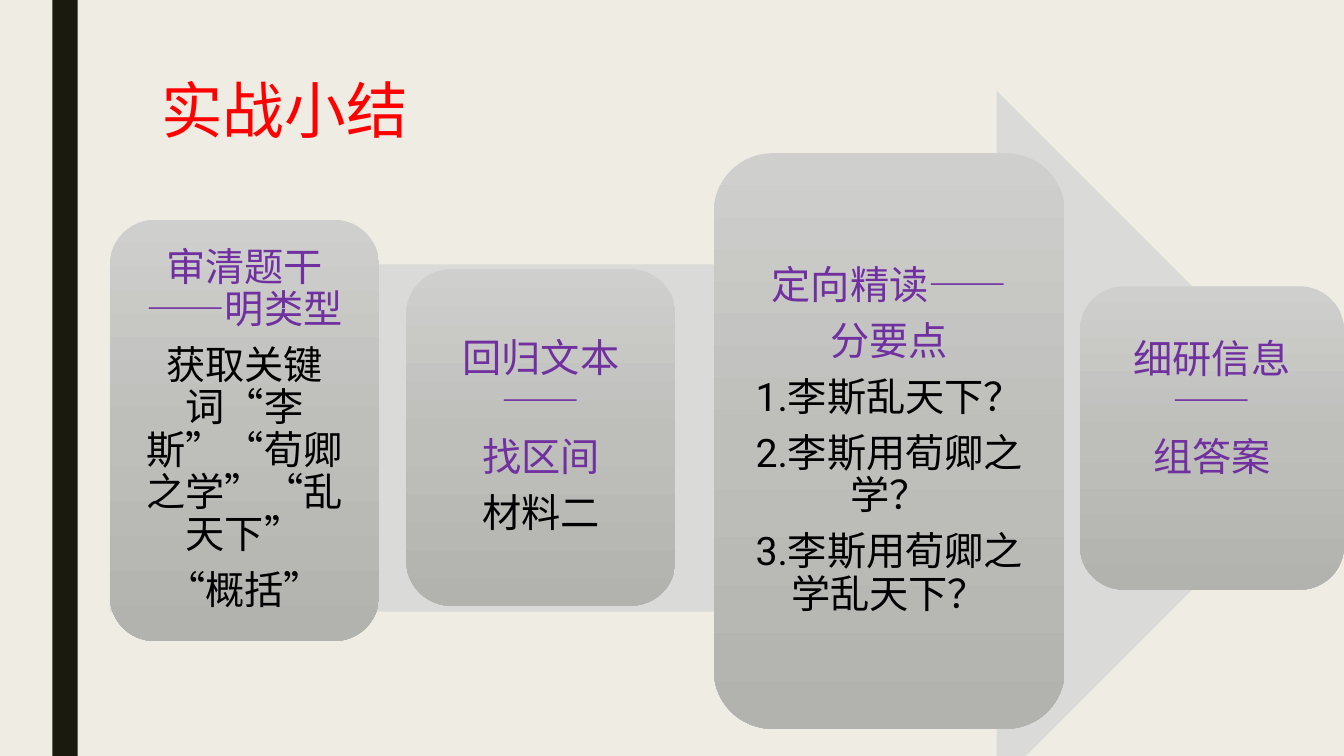
from copy import deepcopy
from dataclasses import dataclass

from pptx import Presentation
from pptx.dml.color import RGBColor
from pptx.enum import lang, shapes, text
from pptx.oxml import ns
from pptx.util import Inches, Pt


@dataclass(frozen=True)
class Theme:
    font: str = "Roboto"
    background: str = "EFEDE3"
    bar: str = "191B0E"
    arrow: str = "DADBD9"
    card: tuple = ("CFCFCD", "BEBEBB", "B2B3AF")
    title: str = "FF0000"
    heading: str = "7030A0"
    body: str = "000000"
    title_size: int = 44
    body_size: int = 28


THEME = Theme()
CARD_MARGIN = 0.12
EMPTY_LINE = 0.56

# Each step: box, heading lines, body lines, extra room below the text
STEPS = [
    ((1.09, 2.18, 2.67, 4.18), ["审清题干——明类型"],
     ["获取关键词“李斯”“荀卿之学”“乱天下”", "“概括”"], 0),
    ((4.03, 2.67, 2.67, 3.34), ["回归文本——", "找区间"], ["材料二"], 0),
    ((7.08, 1.52, 3.48, 5.71), ["定向精读——", "分要点"],
     ["1.李斯乱天下？", "2.李斯用荀卿之学？", "3.李斯用荀卿之学乱天下？"], 0),
    ((10.71, 2.84, 2.62, 3.01), ["细研信息——", "组答案"], [], EMPTY_LINE),
]


def write(para, words, *, size, color, align, spacing, after=0):
    para.alignment = align
    para.line_spacing = spacing
    para.space_before = Pt(0)
    para.space_after = Pt(after)
    span = para.add_run()
    span.text = words
    font = span.font
    font.name = THEME.font
    font.size = Pt(size)
    font.color.rgb = RGBColor.from_string(color)
    font.language_id = lang.MSO_LANGUAGE_ID.SIMPLIFIED_CHINESE


def add_block(page, kind, box, color=None):
    block = page.shapes.add_shape(kind, *map(Inches, box))
    block.shadow.inherit = False
    block.line.fill.background()
    if color:
        block.fill.solid()
        block.fill.fore_color.rgb = RGBColor.from_string(color)
    return block


def shade(card):
    """Fill a card with the three-stop vertical gradient."""
    top, middle, bottom = THEME.card
    card.fill.gradient()
    card.fill.gradient_angle = 270
    stops = card.fill.gradient_stops
    for stop, color, position in zip(stops, (top, bottom), (0, 1)):
        stop.color.rgb = RGBColor.from_string(color)
        stop.position = position
    first = card._element.spPr.find(".//" + ns.qn("a:gs"))
    center = deepcopy(first)
    center.set("pos", "50000")
    center[0].set("val", middle)
    first.addnext(center)


def add_title(page, box, words):
    title = page.shapes.title
    title.left, title.top, title.width, title.height = map(Inches, box)
    frame = title.text_frame
    frame.auto_size = text.MSO_AUTO_SIZE.NONE
    frame.vertical_anchor = text.MSO_ANCHOR.TOP
    write(frame.paragraphs[0], words, size=THEME.title_size, color=THEME.title,
          align=text.PP_ALIGN.LEFT, spacing=0.89)


def add_card(page, box, headings, details, room_below):
    card = add_block(page, shapes.MSO_SHAPE.ROUNDED_RECTANGLE, box)
    shade(card)
    frame = card.text_frame
    frame.word_wrap = True
    frame.vertical_anchor = text.MSO_ANCHOR.MIDDLE
    frame.margin_left = frame.margin_right = frame.margin_top = Inches(CARD_MARGIN)
    frame.margin_bottom = Inches(CARD_MARGIN + room_below)
    lines = [(words, THEME.heading) for words in headings]
    lines += [(words, THEME.body) for words in details]
    for index, (words, color) in enumerate(lines):
        para = frame.add_paragraph() if index else frame.paragraphs[0]
        write(para, words, size=THEME.body_size, color=color,
              align=text.PP_ALIGN.CENTER, spacing=0.9,
              after=0.35 * THEME.body_size)


def add_process(page, box):
    """Place the arrow in its box, with the step cards over it."""
    add_block(page, shapes.MSO_SHAPE.RIGHT_ARROW, box, THEME.arrow)
    for step in STEPS:
        add_card(page, *step)


def main():
    deck = Presentation()
    deck.slide_width, deck.slide_height = Inches(13.33), Inches(7.5)
    page = deck.slides.add_slide(deck.slide_layouts[5])

    # Background and side bar
    page.background.fill.solid()
    page.background.fill.fore_color.rgb = RGBColor.from_string(THEME.background)
    add_block(page, shapes.MSO_SHAPE.RECTANGLE, (0.52, 0, 0.25, 7.5), THEME.bar)

    # Title and process
    add_title(page, (1.5, 0.75, 10.5, 1.62), "实战小结")
    add_process(page, (1.09, 0.9, 12.24, 6.89))

    deck.save("out.pptx")


if __name__ == "__main__":
    main()
